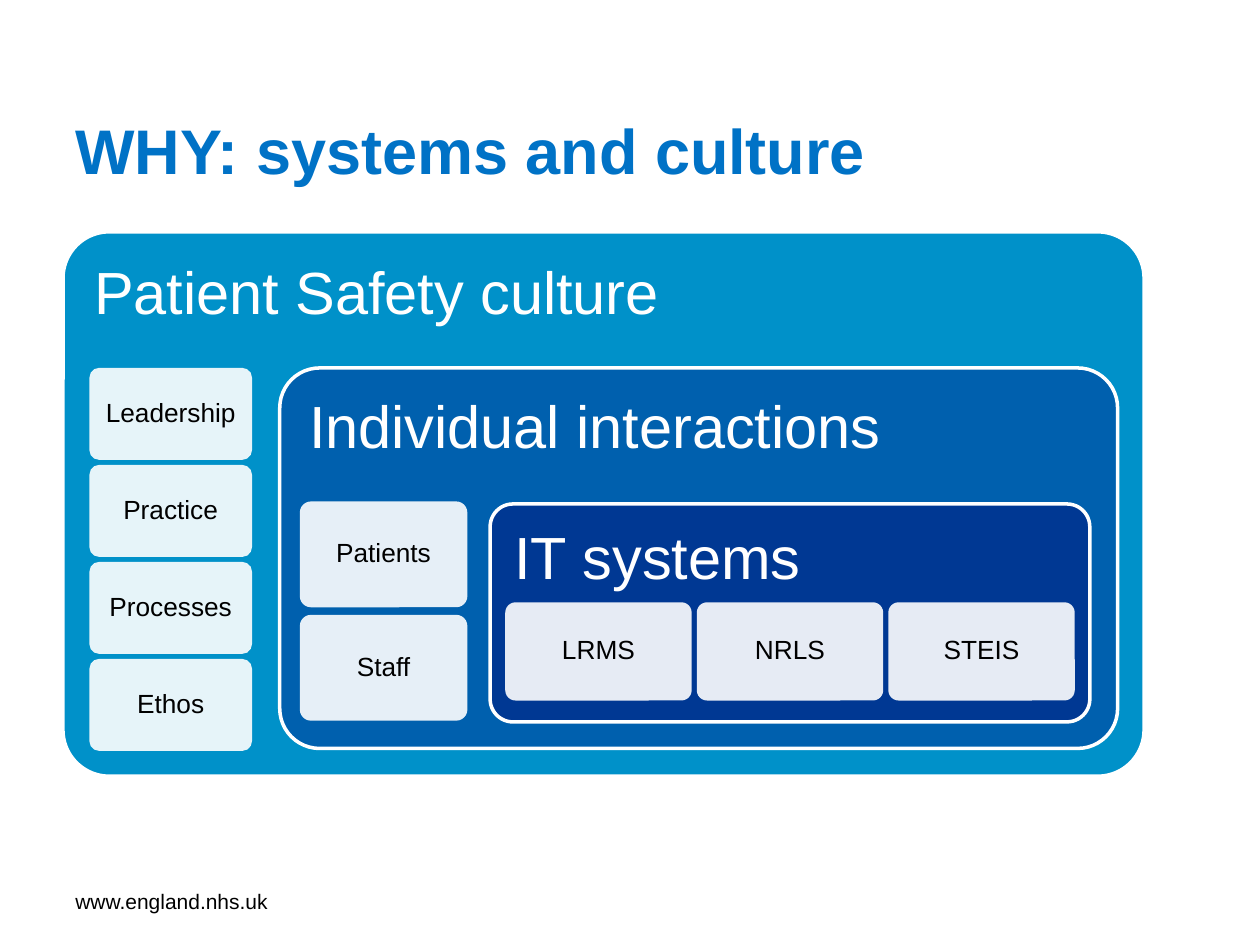
from lxml import etree
from pptx import Presentation
from pptx import util as u
from pptx.dml.color import RGBColor
from pptx.enum import shapes, text
from pptx.oxml import ns


def colour(hex_string):
    return RGBColor.from_string(hex_string)


class SlideBuilder:
    font = "Arial"
    white = "FFFFFF"
    black = "000000"

    def __init__(self, slide):
        self.slide = slide

    def set_text(self, shape, wording, size, hex_string, bold=False):
        frame = shape.text_frame
        frame.text = wording
        frame.word_wrap = True
        paragraph = frame.paragraphs[0]
        font = paragraph.runs[0].font
        font.name = self.font
        font.size = u.Pt(size)
        font.bold = bold
        font.color.rgb = colour(hex_string)
        return paragraph

    def label(self, wording, left, top, width, height, size, hex_string, bold=False):
        box = self.slide.shapes.add_textbox(
            *(u.Inches(length) for length in (left, top, width, height)))
        self.set_text(box, wording, size, hex_string, bold)
        box.text_frame.vertical_anchor = text.MSO_ANCHOR.MIDDLE

    def rounded_box(self, wording, bounds, corner, fill, size, hex_string, inset):
        shape = self.slide.shapes.add_shape(
            shapes.MSO_SHAPE.ROUNDED_RECTANGLE, *(u.Inches(length) for length in bounds))
        shape.shadow.inherit = False
        shape.adjustments[0] = corner
        shape.fill.solid()
        shape.fill.fore_color.rgb = colour(fill)
        paragraph = self.set_text(shape, wording, size, hex_string)
        paragraph.line_spacing = 0.9
        frame = shape.text_frame
        frame.margin_left = frame.margin_right = u.Inches(inset)
        frame.margin_top = frame.margin_bottom = u.Inches(inset)
        return shape

    def panel(self, wording, bounds, fill, corner=0.105):
        shape = self.rounded_box(wording, bounds, corner, fill, 34, self.white, 0.14)
        shape.line.color.rgb = colour(self.white)
        shape.line.width = u.Pt(2)
        shape.text_frame.vertical_anchor = text.MSO_ANCHOR.TOP
        shape.text_frame.paragraphs[0].alignment = text.PP_ALIGN.LEFT

    def tile(self, wording, bounds):
        """Add a white, 90% opaque box with a centred label."""
        shape = self.rounded_box(wording, bounds, 0.105, self.white, 15, self.black, 0.06)
        shape.line.fill.background()
        fill_colour = shape.element.spPr.find(ns.qn("a:solidFill"))[0]
        etree.SubElement(fill_colour, ns.qn("a:alpha"), val="90000")
        shape.text_frame.vertical_anchor = text.MSO_ANCHOR.MIDDLE
        shape.text_frame.paragraphs[0].alignment = text.PP_ALIGN.CENTER

    def tiles(self, wordings, left, top, width, height, step_x=0, step_y=0):
        """Lay out equal tiles, each one step on from the last."""
        for index, wording in enumerate(wordings):
            self.tile(wording, (left + index * step_x, top + index * step_y, width, height))


def main():
    presentation = Presentation()
    presentation.slide_width = u.Inches(10)
    presentation.slide_height = u.Inches(7.5)
    builder = SlideBuilder(presentation.slides.add_slide(presentation.slide_layouts[6]))

    builder.label("WHY: systems and culture", 0.5, 0.82, 8.05, 0.73, 36, "0072C6", bold=True)

    builder.panel("Patient Safety culture", (0.5, 1.84, 8.58, 4.32), "0091C9", corner=0.085)
    builder.tiles(("Leadership", "Practice", "Processes", "Ethos"),
                  0.71, 2.92, 1.29, 0.73, step_y=0.77)

    builder.panel("Individual interactions", (2.22, 2.92, 6.65, 3.02), "0060AE")
    builder.tiles(("Patients", "Staff"), 2.38, 3.98, 1.33, 0.84, step_y=0.9)

    builder.panel("IT systems", (3.89, 4, 4.76, 1.73), "003893")
    builder.tiles(("LRMS", "NRLS", "STEIS"), 4.01, 4.78, 1.48, 0.78, step_x=1.52)

    builder.label("www.england.nhs.uk", 0.5, 6.95, 2.33, 0.4, 12, builder.black)
    presentation.save("out.pptx")


if __name__ == "__main__":
    main()
